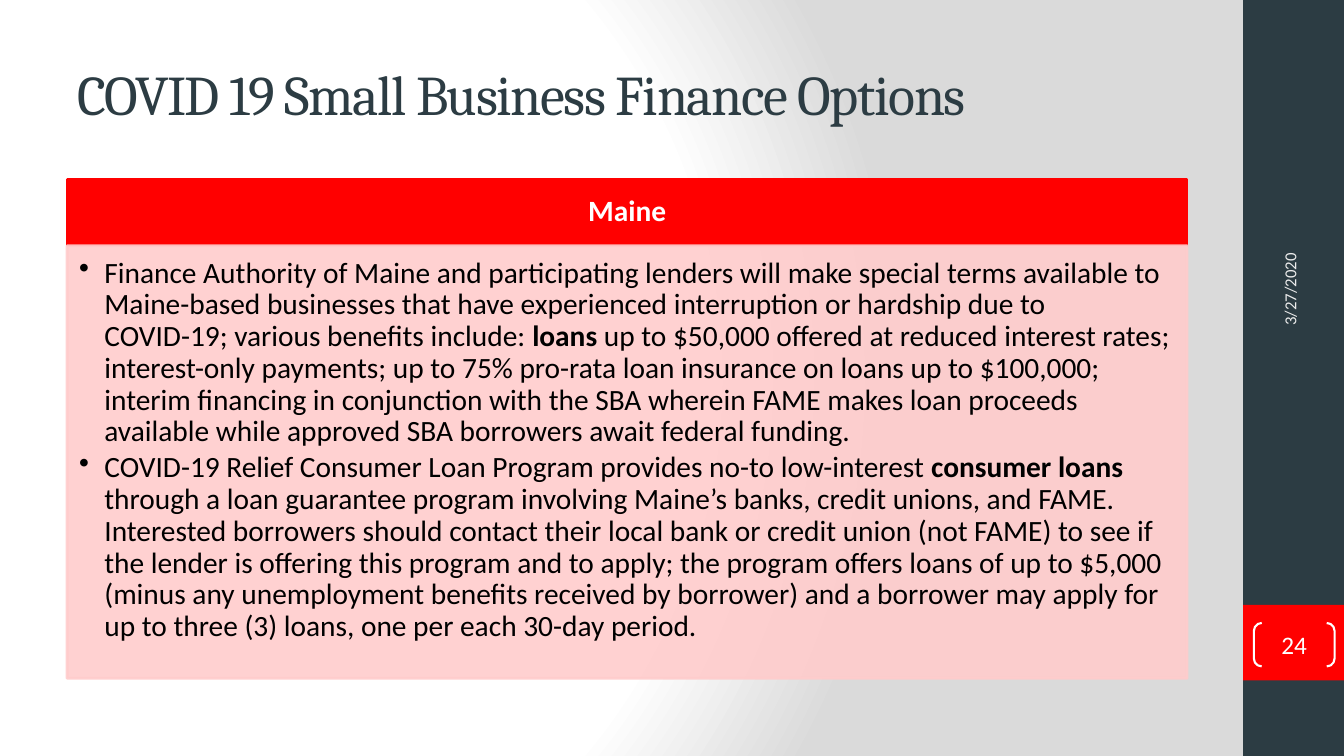
from lxml import etree
from pptx import Presentation
from pptx.dml.color import RGBColor
from pptx.enum.shapes import MSO_SHAPE
from pptx.enum.text import MSO_ANCHOR, PP_ALIGN
from pptx.oxml import parse_xml
from pptx.oxml.ns import nsdecls, qn
from pptx.util import Pt

RECT, BRACKET = MSO_SHAPE.RECTANGLE, MSO_SHAPE.DOUBLE_BRACKET
TOP, MIDDLE = MSO_ANCHOR.TOP, MSO_ANCHOR.MIDDLE
LEFT, CENTER = PP_ALIGN.LEFT, PP_ALIGN.CENTER

SLATE = RGBColor(0x2C, 0x3C, 0x43)
RED = RGBColor(0xFF, 0x00, 0x00)
PINK = RGBColor(0xFF, 0xCC, 0xCC)
WHITE = RGBColor(0xFF, 0xFF, 0xFF)
PALE = RGBColor(0xEB, 0xEB, 0xEB)
GRAY = RGBColor(0xDA, 0xDA, 0xDA)
BLACK = RGBColor(0x00, 0x00, 0x00)

TERMS = [
    ("Finance Authority of Maine and participating lenders will make special terms available to "
     "Maine-based businesses that have experienced interruption or hardship due to COVID-19; "
     "various benefits include: ", False),
    ("loans", True),
    (" up to $50,000 offered at reduced interest rates; interest-only payments; up to 75% pro-rata "
     "loan insurance on loans up to $100,000; interim financing in conjunction with the SBA wherein "
     "FAME makes loan proceeds available while approved SBA borrowers await federal funding.", False),
]
RELIEF = [
    ("COVID-19 Relief Consumer Loan Program provides no-to low-interest ", False),
    ("consumer loans ", True),
    ("through a loan guarantee program involving Maine’s banks, credit unions, and FAME. "
     "Interested borrowers should contact their local bank or credit union (not FAME) to see if "
     "the lender is offering this program and to apply; the program offers loans of up to $5,000 "
     "(minus any unemployment benefits received by borrower) and a borrower may apply for up to "
     "three (3) loans, one per each 30-day period.", False),
]


def assign(target, values):
    for name, value in values.items():
        setattr(target, name, value)


class Page:
    face = "Calibri"

    def __init__(self, deck):
        self.slide = deck.slides.add_slide(deck.slide_layouts[6])

    def backdrop(self, stops):
        self.slide.background.fill.gradient()
        old = self.slide.element.find(".//" + qn("a:gradFill"))
        marks = "".join(f'<a:gs pos="{place * 1000}"><a:srgbClr val="{color}"/></a:gs>'
                        for place, color in stops)
        new = parse_xml(
            f'<a:gradFill {nsdecls("a")} rotWithShape="1"><a:gsLst>{marks}</a:gsLst>'
            '<a:path path="circle"><a:fillToRect l="20000" t="50000" r="100000" b="50000"/>'
            '</a:path></a:gradFill>')
        old.getparent().replace(old, new)

    def shape(self, kind, box, fill=None, line=None, width=2, alpha=None):
        item = self.slide.shapes.add_shape(kind, *map(Pt, box))
        item.shadow.inherit = False
        for paint, color in ((item.fill, fill), (item.line.fill, line)):
            if color is None:
                paint.background()
            else:
                paint.solid()
                paint.fore_color.rgb = color
        if line is not None:
            item.line.width = Pt(width)
        if alpha:
            for tint in item.element.spPr.iter(qn("a:srgbClr")):
                etree.SubElement(tint, qn("a:alpha"), val=str(alpha * 1000))
        return item

    def label(self, box, turn=0):
        item = self.slide.shapes.add_textbox(*map(Pt, box))
        item.rotation = turn
        return item

    def text(self, item, paras, size, color, face=None, align=LEFT, anchor=MIDDLE,
             inset=(7.2, 3.6, 7.2, 3.6), bullet=False, track=0, **form):
        frame = item.text_frame
        sides = ("margin_left", "margin_top", "margin_right", "margin_bottom")
        assign(frame, {"word_wrap": True, "vertical_anchor": anchor,
                       **dict(zip(sides, map(Pt, inset)))})
        for index, runs in enumerate(paras):
            para = frame.add_paragraph() if index else frame.paragraphs[0]
            assign(para, {"alignment": align, **form})
            if bullet:
                props = para._p.get_or_add_pPr()
                props.set("marL", str(Pt(18)))
                props.set("indent", str(-Pt(18)))
                etree.SubElement(props, qn("a:buChar"), char="•")
            for words, bold in runs:
                run = para.add_run()
                run.text = words
                assign(run.font, {"name": face or self.face, "size": Pt(size), "bold": bold})
                run.font.color.rgb = color
                if track:
                    run._r.get_or_add_rPr().set("spc", str(track * 100))


def main():
    deck = Presentation()
    assign(deck, {"slide_width": Pt(960), "slide_height": Pt(540)})
    page = Page(deck)
    page.backdrop([(0, WHITE), (75, WHITE), (100, GRAY)])
    page.shape(RECT, (888, 0, 72, 540), SLATE)
    page.shape(RECT, (888, 432, 72, 54), RED)

    title = page.label((48, 21.6, 800, 90))
    page.text(title, [[("COVID 19 Small Business Finance Options", False)]], 40, SLATE,
              "Cambria", track=-1)
    date = page.label((825.1, 124.6, 192.2, 38.2), 270)
    page.text(date, [[("3/27/2020", False)]], 12, PALE)
    number = page.shape(BRACKET, (895.7, 445, 57.6, 31), line=WHITE, width=1.5)
    number.adjustments[0] = 0.18
    page.text(number, [[("24", False)]], 18, WHITE, align=CENTER, inset=(0, 0, 0, 0))

    head = page.shape(RECT, (48, 128, 800, 47.5), RED, RED)
    page.text(head, [[("Maine", True)]], 21, WHITE, align=CENTER,
              inset=(11.5, 6.5, 11.5, 6.5), line_spacing=0.9)
    body = page.shape(RECT, (48, 175.5, 800, 309), PINK, PINK, alpha=90)
    page.text(body, [TERMS, RELIEF], 21, BLACK, anchor=TOP, inset=(8.6, 8.6, 11.5, 13),
              bullet=True, line_spacing=0.9, space_after=Pt(3))
    deck.save("out.pptx")


if __name__ == "__main__":
    main()
